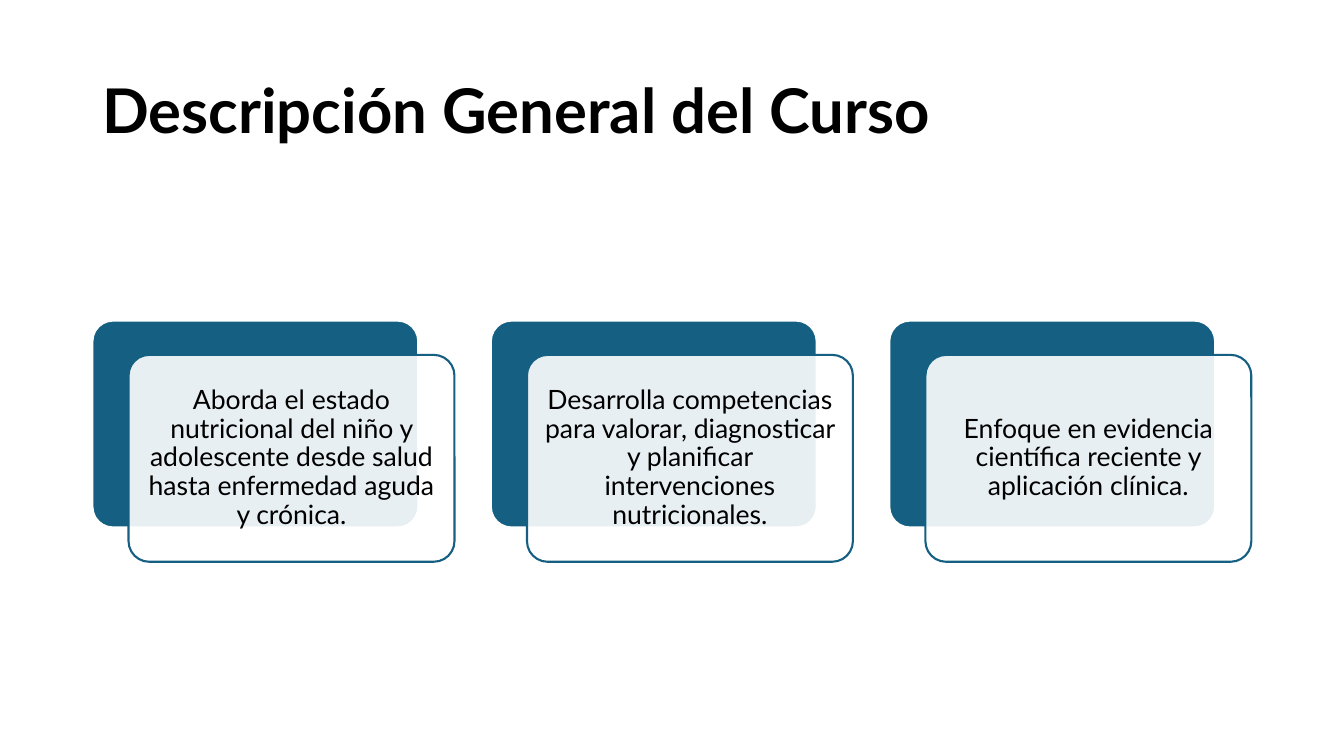
from dataclasses import dataclass

from lxml import etree
from pptx import Presentation
from pptx.dml.color import RGBColor
from pptx.enum.shapes import MSO_SHAPE
from pptx.enum.text import MSO_ANCHOR, PP_ALIGN
from pptx.oxml.ns import qn
from pptx.util import Pt

ROUND = MSO_SHAPE.ROUNDED_RECTANGLE
MIDDLE = MSO_ANCHOR.MIDDLE
LEFT, CENTER = PP_ALIGN.LEFT, PP_ALIGN.CENTER


@dataclass(frozen=True)
class Theme:
    font: str = "Lato"
    ink: str = "000000"
    paper: str = "FFFFFF"
    teal: str = "156082"
    head: int = 44
    body: int = 19
    rule: float = 1.5


class Deck:
    """Draws styled elements on the current slide."""

    def __init__(self, theme, slide):
        self.theme = theme
        self.slide = slide

    def label(self, shape, text, size, align, bold=False):
        frame = shape.text_frame
        frame.word_wrap = True
        frame.vertical_anchor = MIDDLE
        frame.text = text
        para = frame.paragraphs[0]
        para.alignment = align
        para.line_spacing = 0.9
        font = para.runs[0].font
        font.name = self.theme.font
        font.size = Pt(size)
        font.bold = bold
        font.color.rgb = RGBColor.from_string(self.theme.ink)

    def title(self, text, *box):
        shape = self.slide.shapes.add_textbox(*map(Pt, box))
        self.label(shape, text, self.theme.head, LEFT, bold=True)

    def panel(self, box, fill, line, alpha=None):
        shape = self.slide.shapes.add_shape(ROUND, *map(Pt, box))
        shape.adjustments[0] = 0.1
        shape.shadow.inherit = False
        shape.fill.solid()
        shape.fill.fore_color.rgb = RGBColor.from_string(fill)
        shape.line.color.rgb = RGBColor.from_string(line)
        shape.line.width = Pt(self.theme.rule)
        if alpha is not None:
            color = shape.element.spPr.find(qn("a:solidFill"))[0]
            etree.SubElement(color, qn("a:alpha")).set("val", str(alpha * 1000))
        return shape

    def card(self, text, left, top, width, height):
        theme = self.theme
        self.panel((left, top, width, height), theme.teal, theme.paper)
        front = self.panel((left + 25.8, top + 24.5, width, height),
                           theme.paper, theme.teal, alpha=90)
        frame = front.text_frame
        frame.margin_left = frame.margin_right = Pt(5.7)
        frame.margin_top = frame.margin_bottom = Pt(5.7)
        self.label(front, text, theme.body, CENTER)


CARDS = (
    "Aborda el estado nutricional del niño y adolescente desde salud "
    "hasta enfermedad aguda y crónica.",
    "Desarrolla competencias para valorar, diagnosticar y planificar "
    "intervenciones nutricionales.",
    "Enfoque en evidencia científica reciente y aplicación clínica.",
)


def main():
    prs = Presentation()
    prs.slide_width, prs.slide_height = Pt(960), Pt(540)
    deck = Deck(Theme(), prs.slides.add_slide(prs.slide_layouts[6]))
    deck.title("Descripción General del Curso", 66, 28.75, 828, 104.4)
    for index, text in enumerate(CARDS):
        deck.card(text, 66 + index * 284.6, 229, 232.8, 147.8)
    prs.save("out.pptx")


if __name__ == "__main__":
    main()
